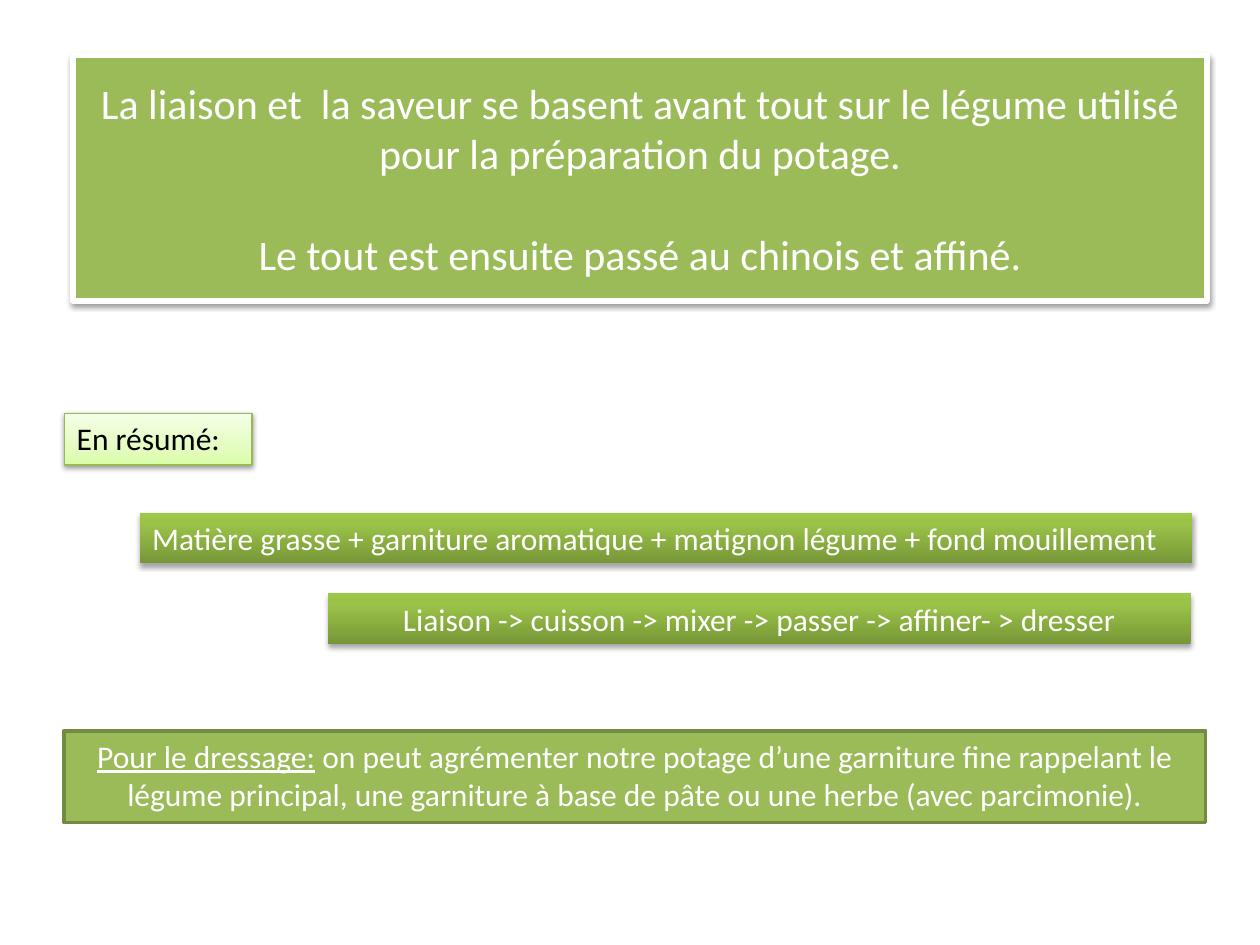
from copy import deepcopy

from lxml import etree
from pptx import Presentation
from pptx.dml.color import RGBColor
from pptx.enum import shapes, text
from pptx.oxml.ns import qn
from pptx.util import Inches, Pt

WHITE = RGBColor(0xFF, 0xFF, 0xFF)
BLACK = RGBColor(0, 0, 0)
GREEN = RGBColor(0x9B, 0xBB, 0x59)
EDGE_LIGHT = RGBColor(0x98, 0xB9, 0x55)
EDGE_DARK = RGBColor(0x73, 0x8A, 0x42)
# Gradient stops, from the bottom edge to the top edge
PALE = [(0, RGBColor(0xDA, 0xFD, 0xA7)), (0.35, RGBColor(0xE4, 0xFC, 0xC2)),
        (1, RGBColor(0xF5, 0xFF, 0xE7))]
DEEP = [(0, RGBColor(0x77, 0x97, 0x37)), (0.8, RGBColor(0x9B, 0xC3, 0x48)),
        (1, RGBColor(0x9D, 0xC7, 0x46))]
LEFT, CENTER = text.PP_ALIGN.LEFT, text.PP_ALIGN.CENTER


def write(shape, paragraphs, size=18, color=WHITE, align=CENTER,
          anchor=text.MSO_ANCHOR.TOP, gap=0):
    """Fill a shape with paragraphs, each a list of (wording, underlined)."""
    frame = shape.text_frame
    frame.word_wrap = True
    frame.auto_size = text.MSO_AUTO_SIZE.NONE
    frame.vertical_anchor = anchor
    for index, spans in enumerate(paragraphs):
        para = frame.add_paragraph() if index else frame.paragraphs[0]
        para.alignment = align
        para.space_before = Pt(gap if index else 0)
        for wording, underlined in spans:
            span = para.add_run()
            span.text = wording
            font = span.font
            font.name, font.size, font.underline = "Calibri", Pt(size), underlined
            font.color.rgb = color


def paint(shape, fill, line=None, line_width=0.75):
    """Give a shape a solid colour or a list of gradient stops, and an edge."""
    if isinstance(fill, RGBColor):
        shape.fill.solid()
        shape.fill.fore_color.rgb = fill
    else:
        shape.fill.gradient()
        shape.fill.gradient_angle = 90
        stop_list = shape._element.spPr.find(".//" + qn("a:gsLst"))
        stop_list.append(deepcopy(stop_list[0]))
        for stop, (position, color) in zip(shape.fill.gradient_stops, fill):
            stop.position = position
            stop.color.rgb = color
    if line is None:
        shape.line.fill.background()
    else:
        shape.line.color.rgb = line
        shape.line.width = Pt(line_width)
    shape.shadow.inherit = False


def cast_shadow(shape, distance, opacity):
    """Drop a soft black shadow straight down."""
    effects = shape._element.spPr.find(qn("a:effectLst"))
    shadow = etree.SubElement(effects, qn("a:outerShdw"), blurRad=str(Pt(3.1)),
                              dist=str(Pt(distance)), dir="5400000", rotWithShape="0")
    color = etree.SubElement(shadow, qn("a:srgbClr"), val="000000")
    etree.SubElement(color, qn("a:alpha"), val=str(opacity * 1000))


def add_panel(page, left, top, width, height):
    return page.shapes.add_shape(shapes.MSO_SHAPE.RECTANGLE, Inches(left), Inches(top),
                                 Inches(width), Inches(height))


def add_title(page, left, top, width, height):
    title = page.shapes.title
    title.left, title.top = Inches(left), Inches(top)
    title.width, title.height = Inches(width), Inches(height)
    paint(title, GREEN, line=WHITE, line_width=3)
    cast_shadow(title, distance=1.6, opacity=38)
    write(title, [
        [("La liaison et  la saveur se basent avant tout sur le légume utilisé "
          "pour la préparation du potage.", False)],
        [("Le tout est ensuite passé au chinois et affiné.", False)],
    ], size=24, anchor=text.MSO_ANCHOR.MIDDLE, gap=29)


def add_summary_label(page, left, top, width, height):
    label = add_panel(page, left, top, width, height)
    paint(label, PALE, line=EDGE_LIGHT)
    cast_shadow(label, distance=1.6, opacity=38)
    write(label, [[("En résumé:", False)]], color=BLACK, align=LEFT)


def add_step_bar(page, left, top, width, height, wording, align):
    bar = add_panel(page, left, top, width, height)
    paint(bar, DEEP)
    cast_shadow(bar, distance=1.8, opacity=35)
    write(bar, [[(wording, False)]], align=align)


def add_plating_note(page, left, top, width, height):
    note = add_panel(page, left, top, width, height)
    paint(note, GREEN, line=EDGE_DARK, line_width=2)
    write(note, [[
        ("Pour le dressage:", True),
        (" on peut agrémenter notre potage d’une garniture fine rappelant le légume "
         "principal, une garniture à base de pâte ou une herbe (avec parcimonie).", False),
    ]])


def main():
    deck = Presentation()
    deck.slide_width, deck.slide_height = Inches(10), Inches(7.5)
    page = deck.slides.add_slide(deck.slide_layouts[5])

    # Heading
    add_title(page, 0.58, 0.44, 9, 1.95)

    # Summary of the recipe
    add_summary_label(page, 0.51, 3.28, 1.49, 0.41)
    add_step_bar(page, 1.11, 4.07, 8.35, 0.4,
                 "Matière grasse + garniture aromatique + matignon légume + fond mouillement",
                 LEFT)
    add_step_bar(page, 2.6, 4.71, 6.85, 0.4,
                 "Liaison -> cuisson -> mixer -> passer -> affiner- > dresser", CENTER)

    # Plating advice
    add_plating_note(page, 0.51, 5.8, 9.06, 0.73)
    deck.save("out.pptx")


if __name__ == "__main__":
    main()
